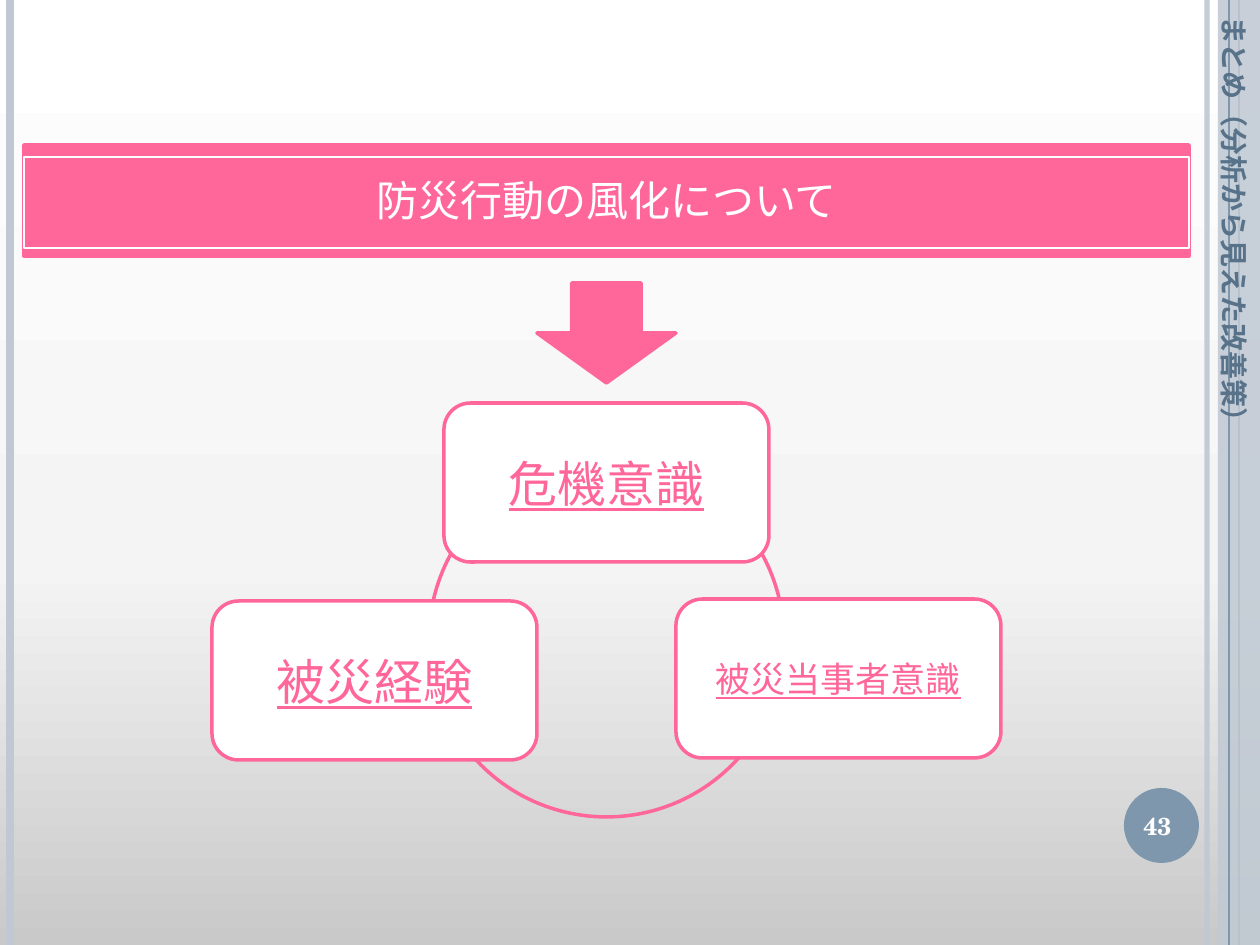
from copy import deepcopy

from lxml import etree
from pptx import Presentation
from pptx.dml.color import RGBColor
from pptx.enum.shapes import MSO_CONNECTOR, MSO_SHAPE
from pptx.enum.text import MSO_ANCHOR, PP_ALIGN
from pptx.oxml.ns import qn
from pptx.util import Pt

PX = 914400 / 126
WIDE, HIGH = 1260, 945
RECT, ROUND = MSO_SHAPE.RECTANGLE, MSO_SHAPE.ROUNDED_RECTANGLE
OVAL, ARROW = MSO_SHAPE.OVAL, MSO_SHAPE.DOWN_ARROW
LINE = MSO_CONNECTOR.STRAIGHT
MIDDLE, TOP = MSO_ANCHOR.MIDDLE, MSO_ANCHOR.TOP
CENTER, LEFT = PP_ALIGN.CENTER, PP_ALIGN.LEFT
PINK = RGBColor(0xFF, 0x66, 0x99)
WHITE = RGBColor(0xFF, 0xFF, 0xFF)
PALE = RGBColor(0xC0, 0xC9, 0xD3)
STEEL = RGBColor(0x7E, 0x97, 0xAD)
SLATE = RGBColor(0x57, 0x72, 0x89)
SHADES = [(0, RGBColor(0xC9, 0xC9, 0xC9)),
          (0.4, RGBColor(0xF4, 0xF4, 0xF4)),
          (1, WHITE)]
SANS, SERIF = "Noto Sans CJK JP", "TeX Gyre Schola"


def emu(*sizes):
    return [round(size * PX) for size in sizes]


def fade(part, share):
    color = part._element.spPr.find(".//" + qn("a:srgbClr"))
    etree.SubElement(color, qn("a:alpha")).set("val", str(share * 1000))


def add_form(slide, kind, box, fill=None, edge=None, width=2):
    form = slide.shapes.add_shape(kind, *emu(*box))
    form.shadow.inherit = False
    if fill is None:
        form.fill.background()
    else:
        form.fill.solid()
        form.fill.fore_color.rgb = fill
    if edge is None:
        form.line.fill.background()
    else:
        form.line.color.rgb = edge
        form.line.width = Pt(width)
    return form


def add_rule(slide, x, color, width):
    rule = slide.shapes.add_connector(LINE, *emu(x, 0, x, HIGH))
    rule.line.color.rgb = color
    rule.line.width = Pt(width)
    etree.SubElement(rule._element.spPr, qn("a:effectLst"))
    return rule


def write(form, text, size, color, face=SANS, align=CENTER, anchor=MIDDLE,
          bold=False, under=False):
    frame = form.text_frame
    frame.word_wrap = True
    frame.vertical_anchor = anchor
    para = frame.paragraphs[0]
    para.text = text
    para.alignment = align
    font = para.font
    font.size, font.name, font.bold = Pt(size), face, bold
    font.underline = under
    font.color.rgb = color
    base = para._p.pPr.find(qn("a:defRPr"))
    etree.SubElement(base, qn("a:ea")).set("typeface", face)
    return para


def paint_back(slide):
    fill = slide.background.fill
    fill.gradient()
    fill.gradient_angle = 90
    stops = slide._element.find(".//" + qn("a:gsLst"))
    stops.append(deepcopy(stops[-1]))
    for stop, (place, color) in zip(fill.gradient_stops, SHADES):
        stop.position = place
        stop.color.rgb = color


def add_frame(slide):
    fade(add_rule(slide, 1207, PALE, 3), 93)
    add_rule(slide, 10, PALE, 4.5)
    add_rule(slide, 1239, STEEL, 1.5)
    fade(add_form(slide, RECT, (1218, 0, 42, HIGH), PALE), 87)
    add_rule(slide, 1229, STEEL, 0.75)


def add_badge(slide, x, y, side, text):
    add_form(slide, OVAL, (x, y, side, side), STEEL)
    label = slide.shapes.add_textbox(*emu(x - 8, y + 2, side + 8, side - 4))
    write(label, text, 14, WHITE, SERIF, bold=True)


def add_banner(slide, x, y, w, h, text):
    add_form(slide, RECT, (x, y, w, h), PINK, PINK)
    inner = add_form(slide, RECT, (x, y + 12, w, h - 20), PINK, WHITE, 0.75)
    write(inner, text, 24, WHITE).line_spacing = 0.9


def add_cycle(slide, x, y, w, h):
    side, wide, high = 355, 325, 159
    mid = x + w // 2
    add_form(slide, OVAL, (mid - side // 2, y + 59, side, side), edge=PINK)
    add_form(slide, ARROW, (mid - 69, y - 120, 139, 100), PINK, PINK)
    low = y + h - high
    cards = [("危機意識", mid - wide // 2, y, 28),
             ("被災当事者意識", x + w - wide, low - 2, 20),
             ("被災経験", x, low, 28)]
    for text, left, top, size in cards:
        card = add_form(slide, ROUND, (left, top, wide, high), WHITE, PINK)
        write(card, text, size, PINK, under=True)


def add_side(slide, x, y, w, h, text):
    label = slide.shapes.add_textbox(
        *emu(x + (w - h) / 2, y + (h - w) / 2, h, w))
    label.rotation = 90
    label.text_frame.margin_left = emu(18)[0]
    write(label, text, 16, SLATE, align=LEFT, anchor=TOP, bold=True)


def main():
    deck = Presentation()
    deck.slide_width, deck.slide_height = emu(WIDE, HIGH)
    slide = deck.slides.add_slide(deck.slide_layouts[6])
    paint_back(slide)
    add_frame(slide)
    add_badge(slide, 1124, 788, 75, "43")
    add_banner(slide, 24, 145, 1165, 111, "防災行動の風化について")
    add_cycle(slide, 212, 403, 789, 357)
    add_side(slide, 1211, -2, 47, 588, "まとめ（分析から見えた改善策）")
    deck.save("out.pptx")


if __name__ == "__main__":
    main()
